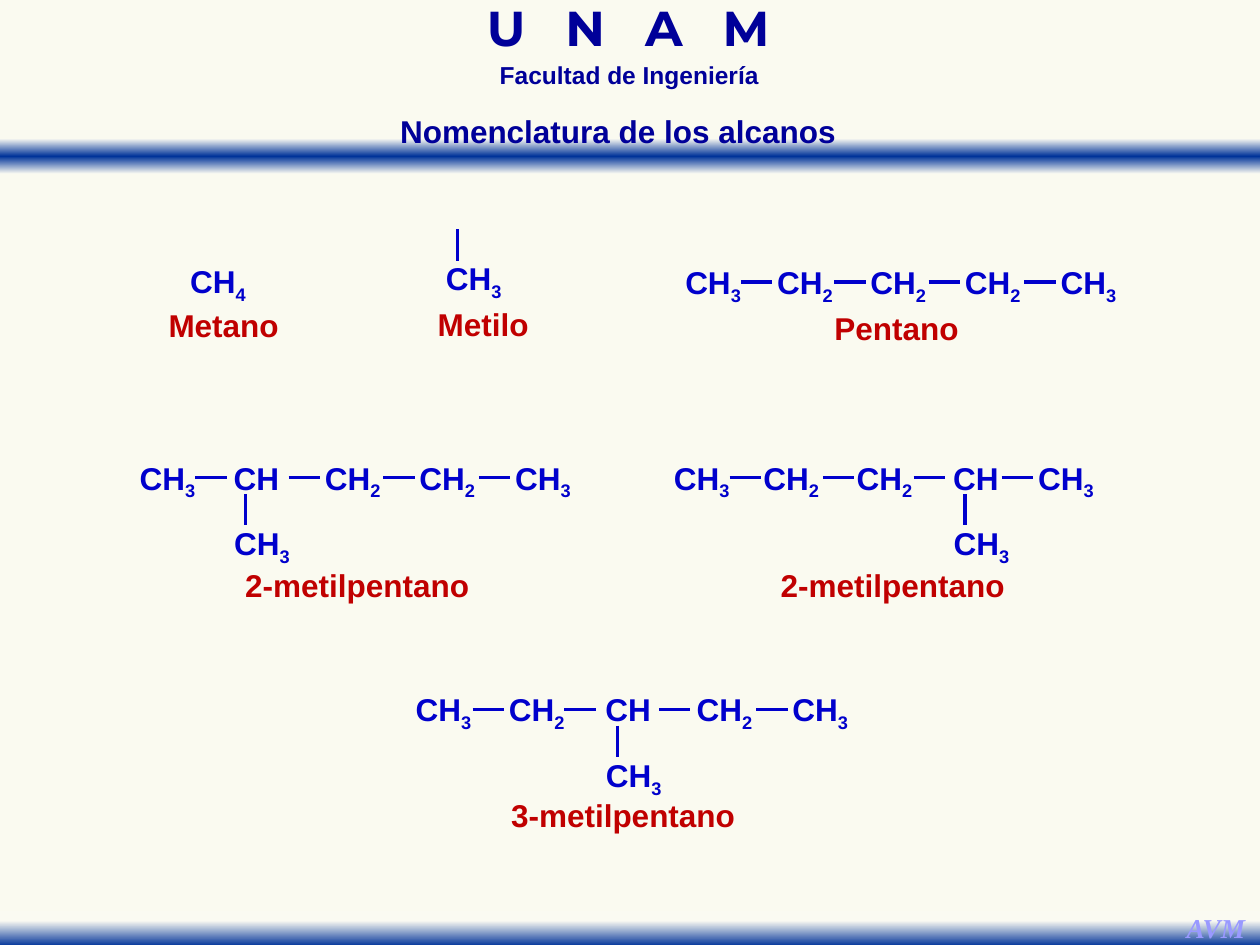
"""Build the alkane nomenclature slide."""
from lxml import etree
from pptx import Presentation
from pptx import util as u
from pptx.dml.color import RGBColor
from pptx.enum import shapes, text
from pptx.oxml.ns import qn

PX = 9144
COLORS = {"paper": "FAFAF2", "ground": "FAFAF0", "band": "003399", "heading": "000099",
          "formula": "0000CC", "name": "C00000", "initials": "9999FF"}
GROUP_W, GROUP_H, BOND = 66, 40, 25
MOLECULES = [
    dict(x=533, y=204, groups=["CH3", "CH2", "CH2", "CH2", "CH3"],
         lefts=[0, 73, 147, 222, 298], bonds=[55, 129, 204, 280],
         name="Pentano", name_box=(116, 37, 125, 38)),
    dict(x=100, y=359, groups=["CH3", "CH", "CH2", "CH2", "CH3"],
         lefts=[0, 75, 147, 222, 298], bonds=[55, 129, 204, 280],
         name="2-metilpentano", name_box=(88, 86, 191, 38)),
    dict(x=524, y=359, groups=["CH3", "CH2", "CH2", "CH", "CH3"],
         lefts=[0, 71, 145, 222, 289], bonds=[55, 129, 201, 271],
         name="2-metilpentano", name_box=(89, 86, 191, 38)),
    dict(x=319, y=543, groups=["CH3", "CH2", "CH", "CH2", "CH3"],
         lefts=[0, 74, 151, 223, 299], bonds=[56, 129, 204, 281],
         name="3-metilpentano", name_box=(80, 85, 191, 38)),
]


def rgb(key):
    """Return the named colour."""
    return RGBColor.from_string(COLORS[key])


def emu(*lengths):
    """Turn px lengths into EMU."""
    return [u.Emu(n * PX) for n in lengths]


def write(sp, words, color, size=18, font="Arial", insets=(4, 4)):
    """Put one centred bold line in a shape, with digits after CH as subscripts."""
    is_formula = words.startswith("CH")
    tf = sp.text_frame
    tf.word_wrap = True
    tf.vertical_anchor = text.MSO_ANCHOR.TOP if is_formula else text.MSO_ANCHOR.MIDDLE
    tf.margin_left, tf.margin_right = emu(*insets)
    tf.margin_top, tf.margin_bottom = emu(5, 5) if is_formula else emu(4, 4)
    p = tf.paragraphs[0]
    p.alignment = text.PP_ALIGN.CENTER
    parts = [words[:2], words[2:]] if is_formula else [words]
    for i, part in enumerate(filter(None, parts)):
        r = p.add_run()
        r.text = part
        if i:
            r.font._element.set("baseline", "-25000")
    p.font.name, p.font.size, p.font.bold = font, u.Pt(size), True
    p.font.color.rgb = rgb(color)
    return p


def label(parent, box, words, color, **style):
    """Add a text box with one line."""
    return write(parent.add_textbox(*emu(*box)), words, color, **style)


def bond(parent, x1, y1, x2, y2):
    """Draw a bond between two points."""
    ln = parent.add_connector(shapes.MSO_CONNECTOR.STRAIGHT, *emu(x1, y1, x2, y2))
    ln.line.color.rgb = rgb("formula")
    ln.line.width = u.Pt(2)
    etree.SubElement(ln._element.spPr, qn("a:effectLst"))


def band(s, box, stops):
    """Add a strip with a vertical gradient."""
    sp = s.shapes.add_shape(shapes.MSO_SHAPE.RECTANGLE, *emu(*box))
    sp.shadow.inherit = False
    sp.line.fill.background()
    sp.fill.gradient()
    sp.fill.gradient_angle = 270
    gs_list = sp._element.spPr.find(qn("a:gradFill")).find(qn("a:gsLst"))
    for gs in list(gs_list):
        gs_list.remove(gs)
    for percent, key in stops:
        gs = etree.SubElement(gs_list, qn("a:gs"), pos=str(percent * 1000))
        etree.SubElement(gs, qn("a:srgbClr"), val=COLORS[key])


def header(s):
    """Place the school heading, the upper band and the title."""
    band(s, (0, 110, 1000, 28), [(0, "paper"), (50, "band"), (100, "paper")])
    p = label(s.shapes, (305, 6, 391, 43), "U N A M", "heading", size=28,
              font="Montserrat", insets=(6, 10))
    p.line_spacing = 0.7
    p.runs[0].font._element.set("spc", "750")
    p = label(s.shapes, (321, 49, 357, 27), "Facultad de Ingeniería", "heading", size=14)
    p.line_spacing = 0.7
    title = s.shapes.title
    title.left, title.top, title.width, title.height = emu(308, 84, 383, 40)
    write(title, "Nomenclatura de los alcanos", "heading", insets=(0, 18))
    s.shapes._spTree.append(title._element)


def footer(s):
    """Place the lower band and the initials."""
    band(s, (0, 723, 1000, 28), [(28, "paper"), (100, "band")])
    p = label(s.shapes, (931, 718, 68, 37), "AVM", "initials", size=15.6,
              font="Times New Roman")
    p.font.italic = True


def methyl(parent, x, y):
    """Place a CH3 group with its bond above."""
    label(parent, (x, y, GROUP_W, GROUP_H), "CH3", "formula")
    bond(parent, x + 20, y - 19, x + 20, y - 19 + BOND)


def molecule(s, x, y, groups, lefts, bonds, name, name_box):
    """Place a chain, with a methyl branch under each CH, and its name."""
    chain = s.shapes.add_group_shape().shapes
    for group, left in zip(groups, lefts):
        width = 57 if group == "CH" else GROUP_W
        label(chain, (x + left, y, width, GROUP_H), group, "formula")
        if group == "CH":
            methyl(chain, x + left, y + 52)
    for left in bonds:
        bond(chain, x + left, y + 20, x + left + BOND, y + 20)
    dx, dy, w, h = name_box
    label(s.shapes, (x + dx, y + dy, w, h), name, "name")


def single_carbons(s):
    """Place methane and the methyl radical."""
    label(s.shapes, (140, 203, GROUP_W, GROUP_H), "CH4", "formula")
    label(s.shapes, (115, 239, 125, 38), "Metano", "name")
    methyl(s.shapes, 343, 201)
    label(s.shapes, (321, 238, 125, 38), "Metilo", "name")


def main():
    """Build and save the slide."""
    prs = Presentation()
    prs.slide_width, prs.slide_height = emu(1000, 750)
    s = prs.slides.add_slide(prs.slide_layouts[5])
    s.background.fill.solid()
    s.background.fill.fore_color.rgb = rgb("ground")
    header(s)
    footer(s)
    single_carbons(s)
    for parts in MOLECULES:
        molecule(s, **parts)
    prs.save("out.pptx")


if __name__ == "__main__":
    main()
